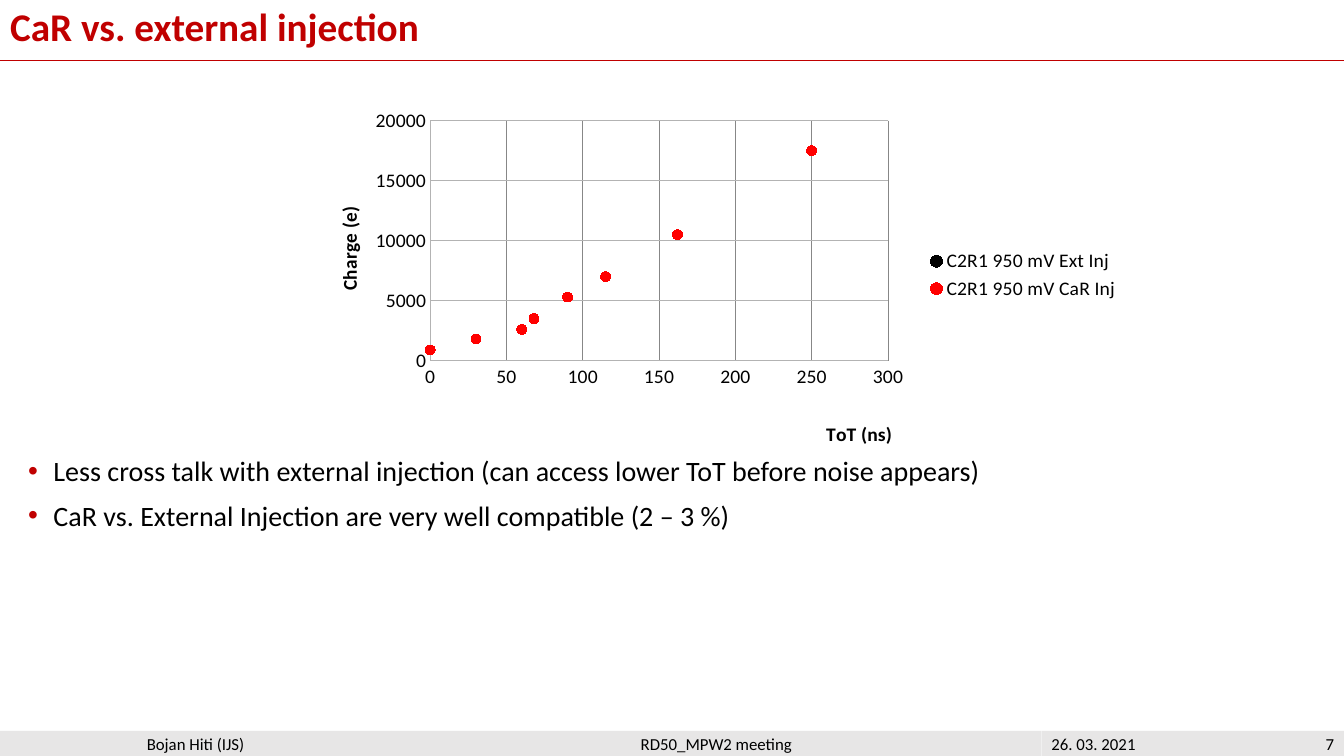
from lxml.etree import SubElement
from pptx import Presentation
from pptx.chart.data import XyChartData
from pptx.dml.color import RGBColor
from pptx.enum.chart import XL_CHART_TYPE, XL_LEGEND_POSITION, XL_MARKER_STYLE, XL_TICK_MARK
from pptx.enum.shapes import MSO_CONNECTOR, MSO_SHAPE
from pptx.enum.text import MSO_ANCHOR, MSO_AUTO_SIZE, PP_ALIGN
from pptx.oxml import parse_xml
from pptx.oxml.ns import nsdecls, qn
from pptx.util import Inches, Pt

FONT = "Calibri"
COLORS = {"accent": "C00000", "text": "000000", "footer": "E7E6E6", "grid": "B3B3B3",
          "vertical_grid": "878787", "external": "000000", "car": "FF0000"}

CHARGES = [900, 1800, 2600, 3500, 5300, 7000, 8800, 10500, 14000, 17500, 31500]
EXTERNAL_TOT = [10, 32, 50, 64, 91, 115, 138, 160, 206, 250]
CAR_TOT = [0, 30, 60, 68, 90, 115, None, 162, None, 250, None]
SERIES = [("C2R1 950 mV Ext Inj", EXTERNAL_TOT, "external"),
          ("C2R1 950 mV CaR Inj", CAR_TOT, "car")]

BULLETS = ["Less cross talk with external injection (can access lower ToT before noise appears)",
           "CaR vs. External Injection are very well compatible (2 – 3 %)"]
FOOTER = [("Bojan Hiti (IJS)", 3.88, PP_ALIGN.CENTER),
          ("RD50_MPW2 meeting", 6.45, PP_ALIGN.CENTER),
          ("26. 03. 2021", 2.08, PP_ALIGN.LEFT),
          ("7", 0.92, PP_ALIGN.RIGHT)]


def color(name):
    return RGBColor.from_string(COLORS[name])


def place(shape, left, top, width, height):
    shape.left, shape.top = Inches(left), Inches(top)
    shape.width, shape.height = Inches(width), Inches(height)


def format_font(font, size, name="text", bold=False):
    font.name, font.size, font.bold = FONT, Pt(size), bold
    font.color.rgb = color(name)


def add_title(slide, text):
    title = slide.shapes.title
    place(title, 0, 0, 11.5, 0.58)
    frame = title.text_frame
    frame.text = text
    frame.auto_size = MSO_AUTO_SIZE.NONE
    frame.vertical_anchor = MSO_ANCHOR.MIDDLE
    paragraph = frame.paragraphs[0]
    paragraph.alignment, paragraph.line_spacing = PP_ALIGN.LEFT, 0.9
    format_font(paragraph.runs[0].font, 28, "accent", True)


def add_rule(slide):
    rule = slide.shapes.add_connector(MSO_CONNECTOR.STRAIGHT, 0, Inches(0.6),
                                      Inches(13.33), Inches(0.6))
    rule.line.color.rgb, rule.line.width = color("accent"), Pt(1)
    SubElement(rule._element.spPr, qn("a:effectLst"))


def add_bullets(slide, texts):
    body = slide.placeholders[1]
    place(body, 0.18, 4.49, 12.86, 2.43)
    frame = body.text_frame
    frame.auto_size = MSO_AUTO_SIZE.NONE
    frame.vertical_anchor = MSO_ANCHOR.TOP
    for index, text in enumerate(texts):
        paragraph = frame.add_paragraph() if index else frame.paragraphs[0]
        paragraph.text = text
        paragraph.line_spacing = 0.9
        paragraph.space_before = Pt(10 if index else 0)
        properties = paragraph._p.get_or_add_pPr()
        properties.set("marL", str(Inches(0.25)))
        properties.set("indent", str(-Inches(0.25)))
        bullet_color = SubElement(properties, qn("a:buClr"))
        SubElement(bullet_color, qn("a:srgbClr"), val=COLORS["accent"])
        SubElement(properties, qn("a:buFont"), typeface="Arial")
        SubElement(properties, qn("a:buChar"), char="•")
        format_font(paragraph.runs[0].font, 20)


def add_footer(slide):
    left = 0
    for text, width, alignment in FOOTER:
        cell = slide.shapes.add_shape(MSO_SHAPE.RECTANGLE, Inches(left), Inches(7.25),
                                      Inches(width), Inches(0.25))
        cell.shadow.inherit = False
        cell.fill.solid()
        cell.fill.fore_color.rgb = color("footer")
        cell.line.fill.background()
        frame = cell.text_frame
        frame.text = text
        frame.vertical_anchor = MSO_ANCHOR.MIDDLE
        frame.paragraphs[0].alignment = alignment
        format_font(frame.paragraphs[0].runs[0].font, 12)
        left += width


def set_layout(element, x, y, width=None, height=None, inner=False):
    """Place a chart part by fractions of the chart area."""
    settings = [("layoutTarget", "inner")] if inner else []
    settings += [("xMode", "edge"), ("yMode", "edge"), ("x", x), ("y", y)]
    if width:
        settings += [("w", width), ("h", height)]
    parts = "".join(f'<c:{tag} val="{value}"/>' for tag, value in settings)
    layout = parse_xml(f'<c:layout {nsdecls("c")}><c:manualLayout>{parts}'
                       '</c:manualLayout></c:layout>')
    for old in element.findall(qn("c:layout")):
        element.remove(old)
    before = [child for child in element
              if child.tag in (qn("c:tx"), qn("c:legendPos"))]
    element.insert(len(before), layout)


def format_axis(axis, title, maximum, unit, grid, title_x, title_y):
    axis.minimum_scale, axis.maximum_scale, axis.major_unit = 0, maximum, unit
    axis.major_tick_mark = axis.minor_tick_mark = XL_TICK_MARK.NONE
    axis.has_major_gridlines = True
    for line, name in ((axis.format.line, "grid"), (axis.major_gridlines.format.line, grid)):
        line.color.rgb, line.width = color(name), Pt(0.75)
    format_font(axis.tick_labels.font, 14)
    axis.tick_labels.number_format = "General"
    axis.tick_labels.number_format_is_linked = False
    frame = axis.axis_title.text_frame
    frame.text = title
    format_font(frame.paragraphs[0].runs[0].font, 14, bold=True)
    set_layout(axis.axis_title._element, title_x, title_y)


def add_injection_chart(slide):
    data = XyChartData()
    for name, times, _ in SERIES:
        series = data.add_series(name)
        for time, charge in zip(times, CHARGES):
            series.add_data_point(time, charge)
    chart = slide.shapes.add_chart(XL_CHART_TYPE.XY_SCATTER, Inches(3.05), Inches(1.01),
                                   Inches(8.11), Inches(3.48), data).chart
    # Charges without a measured time have an empty x value
    for point in list(chart._chartSpace.iter(qn("c:pt"))):
        if point.findtext(qn("c:v")) in ("None", ""):
            point.getparent().remove(point)

    format_font(chart.font, 10)
    chart.has_title = False
    plot = chart.plots[0]
    plot.vary_by_categories = False
    for series, (_, _, name) in zip(plot.series, SERIES):
        series.smooth = False
        series.format.line.fill.background()
        marker = series.marker
        marker.style, marker.size = XL_MARKER_STYLE.CIRCLE, 7
        marker.format.fill.solid()
        marker.format.fill.fore_color.rgb = color(name)
        marker.format.line.color.rgb = color(name)

    format_axis(chart.category_axis, "ToT (ns)", 300, 50, "vertical_grid", 0.63, 0.92)
    format_axis(chart.value_axis, "Charge (e)", 20000, 5000, "grid", 0.03, 0.3)
    chart.has_legend = True
    chart.legend.position = XL_LEGEND_POSITION.RIGHT
    chart.legend.include_in_layout = False
    format_font(chart.legend.font, 14)
    set_layout(chart.legend._element, 0.75, 0.42, 0.25, 0.17)
    set_layout(chart._chartSpace.chart.plotArea, 0.15, 0.055, 0.56, 0.7, inner=True)


def main():
    presentation = Presentation()
    presentation.slide_width, presentation.slide_height = Inches(13.33), Inches(7.5)
    slide = presentation.slides.add_slide(presentation.slide_layouts[1])
    add_rule(slide)
    add_title(slide, "CaR vs. external injection")
    add_footer(slide)
    add_injection_chart(slide)
    add_bullets(slide, BULLETS)
    presentation.save("out.pptx")


if __name__ == "__main__":
    main()
